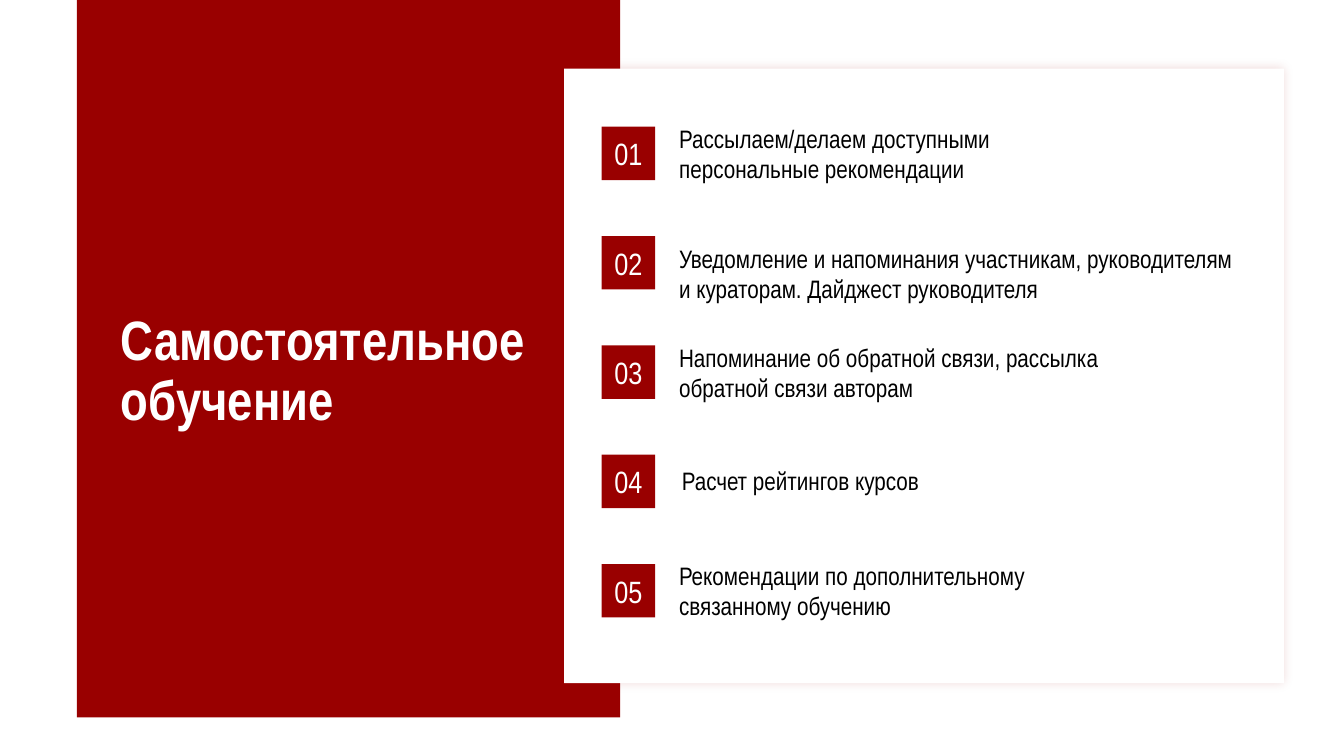
from dataclasses import dataclass

from lxml.etree import SubElement
from pptx import Presentation
from pptx.dml.color import RGBColor
from pptx.enum.shapes import MSO_SHAPE as Shape
from pptx.enum.text import MSO_ANCHOR as Anchor, MSO_AUTO_SIZE as AutoSize, PP_ALIGN as Align
from pptx.oxml.ns import qn
from pptx.util import Pt

# Content: lines, then left, top, width and height of each text, in points
TITLE = "Самостоятельное обучение"
STEPS = [
    (["Рассылаем/делаем доступными персональные рекомендации"],
     (478, 84.3, 325.5, 51)),
    (["Уведомление и напоминания участникам, руководителям",
      "и кураторам. Дайджест руководителя"],
     (478, 170, 475, 51)),
    (["Напоминание об обратной связи, рассылка", "обратной связи авторам"],
     (478, 241, 449, 51)),
    (["Расчет рейтингов курсов"], (480, 329, 449, 29)),
    (["Рекомендации по дополнительному", "связанному обучению"],
     (478, 396.7, 437, 51)),
]


@dataclass(frozen=True)
class Theme:
    font: str = "Arial Narrow"
    red: RGBColor = RGBColor(0x99, 0, 0)
    white: RGBColor = RGBColor(0xFF, 0xFF, 0xFF)
    black: RGBColor = RGBColor(0, 0, 0)
    title_size: float = 39.6
    badge_size: float = 22
    step_size: float = 18


THEME = Theme()

# Layout, in points
PAGE_SIZE = (960, 540)
BAND = (55, 0, 388, 512.5)
CARD = (403, 49, 514, 439)
TITLE_BOX = (79.2, 239, 355, 54.7)
BADGE_LEFT, BADGE_TOP, BADGE_SIDE, BADGE_STEP = 429.8, 90.5, 38.2, 78.1


def points(values):
    return [Pt(value) for value in values]


def format_text(frame, size, color, bold=False):
    frame.word_wrap = True
    for para in frame.paragraphs:
        for span in para.runs:
            span.font.name = THEME.font
            span.font.size = Pt(size)
            span.font.bold = bold
            span.font.color.rgb = color


def add_rectangle(page, place, color):
    box = page.shapes.add_shape(Shape.RECTANGLE, *points(place))
    box.shadow.inherit = False
    box.fill.solid()
    box.fill.fore_color.rgb = color
    box.line.fill.background()
    return box


def add_glow_shadow(box, color, blur, percent):
    effects = box._element.spPr.find(qn("a:effectLst"))
    shadow = SubElement(effects, qn("a:outerShdw"), blurRad=str(Pt(blur)),
                        dist="0", dir="0", algn="ctr", rotWithShape="0")
    tint = SubElement(shadow, qn("a:srgbClr"), val=str(color))
    SubElement(tint, qn("a:alpha"), val=str(percent * 1000))


def add_title(page):
    title = page.shapes.title
    title.left, title.top, title.width, title.height = points(TITLE_BOX)
    frame = title.text_frame
    frame.text = TITLE
    frame.auto_size = AutoSize.NONE
    frame.vertical_anchor = Anchor.MIDDLE
    frame.paragraphs[0].alignment = Align.LEFT
    frame.paragraphs[0].line_spacing = 0.9
    format_text(frame, THEME.title_size, THEME.white, bold=True)
    # Bring the title in front of the band
    page.shapes._spTree.append(title._element)


def add_step_text(page, lines, place):
    frame = page.shapes.add_textbox(*points(place)).text_frame
    frame.text = "\n".join(lines)
    frame.auto_size = AutoSize.SHAPE_TO_FIT_TEXT
    format_text(frame, THEME.step_size, THEME.black)


def add_badge(page, index):
    place = (BADGE_LEFT, BADGE_TOP + index * BADGE_STEP, BADGE_SIDE, BADGE_SIDE)
    frame = add_rectangle(page, place, THEME.red).text_frame
    frame.text = f"{index + 1:02d}"
    frame.margin_left = frame.margin_right = 0
    frame.vertical_anchor = Anchor.MIDDLE
    frame.paragraphs[0].alignment = Align.CENTER
    format_text(frame, THEME.badge_size, THEME.white)


def main():
    deck = Presentation()
    deck.slide_width, deck.slide_height = points(PAGE_SIZE)
    page = deck.slides.add_slide(deck.slide_layouts.get_by_name("Title Only"))

    # Red band, white card and title
    add_rectangle(page, BAND, THEME.red)
    card = add_rectangle(page, CARD, THEME.white)
    add_glow_shadow(card, THEME.red, blur=7, percent=15)
    add_title(page)

    # Numbered steps
    for index, (lines, place) in enumerate(STEPS):
        add_step_text(page, lines, place)
        add_badge(page, index)

    deck.save("out.pptx")


if __name__ == "__main__":
    main()
